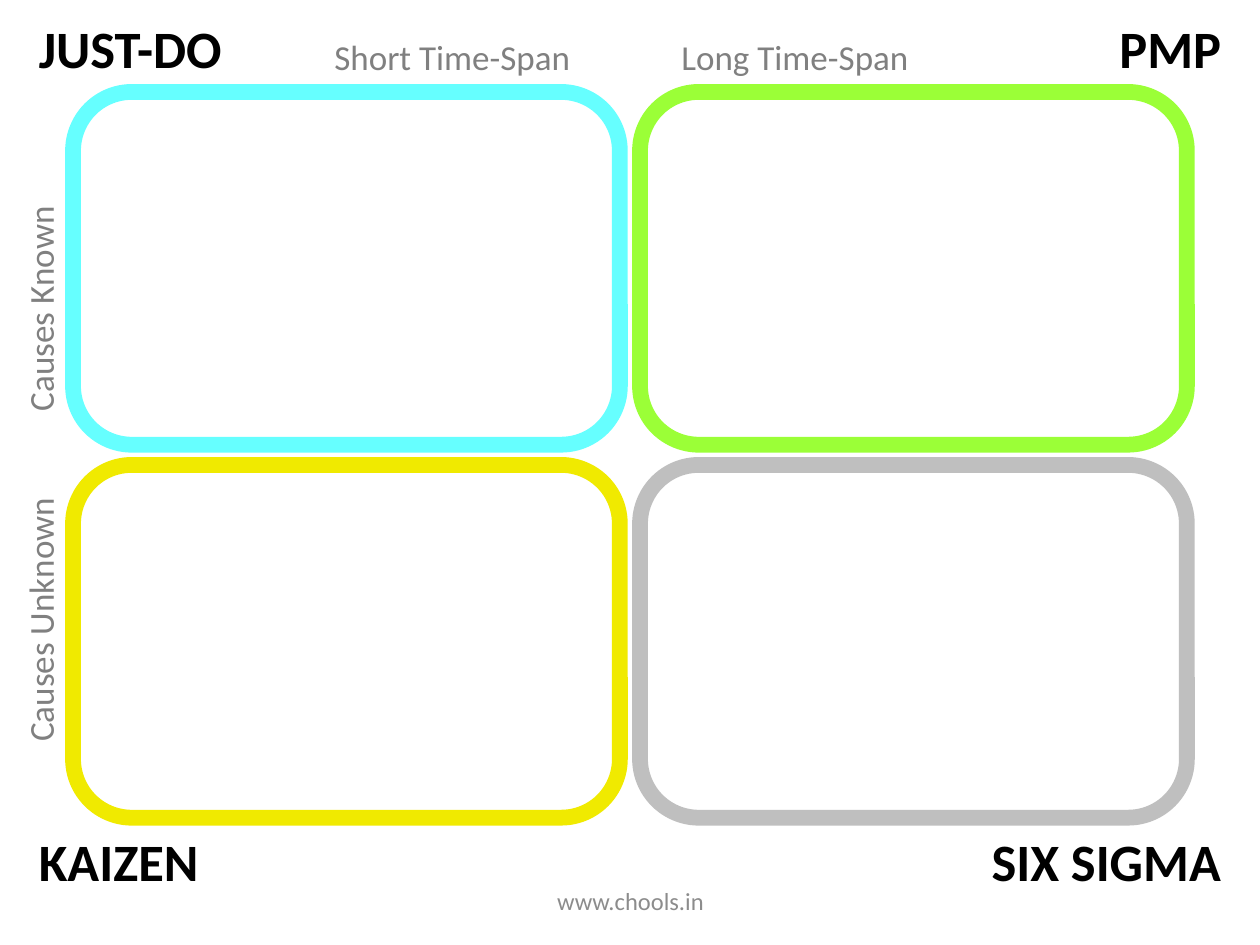
import pptx
import pptx.util
from pptx.dml.color import RGBColor
from pptx.enum.shapes import MSO_SHAPE
from pptx.enum.text import MSO_ANCHOR, PP_ALIGN
from pptx.util import Inches, Pt

FONT = "Calibri"
WHITE = RGBColor(0xFF, 0xFF, 0xFF)
BLACK = RGBColor(0x00, 0x00, 0x00)
AXIS_GRAY = RGBColor(0x80, 0x80, 0x80)
FOOTER_GRAY = RGBColor(0x8C, 0x8C, 0x8C)
CYAN = RGBColor(0x66, 0xFF, 0xFF)
GREEN = RGBColor(0x9B, 0xFF, 0x37)
YELLOW = RGBColor(0xF0, 0xEA, 0x00)
SILVER = RGBColor(0xBF, 0xBF, 0xBF)

SLIDE_W, SLIDE_H = 10, 7.5

# Method, column, row, outline colour, label width
QUADRANTS = [
    ("JUST-DO", 0, 0, CYAN, 1.69),
    ("PMP", 1, 0, GREEN, 1.02),
    ("KAIZEN", 0, 1, YELLOW, 1.48),
    ("SIX SIGMA", 1, 1, SILVER, 2.04),
]
# Label, centre x, centre y, rotation
AXIS_LABELS = [
    ("Short Time-Span", 3.59, 0.45, 0),
    ("Long Time-Span", 6.31, 0.45, 0),
    ("Causes Known", 0.32, 2.45, 270),
    ("Causes Unknown", 0.32, 4.92, 270),
]
FOOTER = "www.chools.in"

BOX_W, BOX_H, GAP = 4.34, 2.8, 0.16
GRID_LEFT, GRID_TOP = 0.58, 0.73
LABEL_MARGIN, LABEL_H, LABEL_TOPS = 0.21, 0.61, (0.08, 6.53)
AXIS_W, AXIS_H = 2.3, 0.44


def add_text(s, text, left, top, width, height, size=20, color=BLACK, bold=False,
             align=PP_ALIGN.LEFT, anchor=MSO_ANCHOR.TOP, rotation=0):
    sp = s.shapes.add_textbox(Inches(left), Inches(top), Inches(width), Inches(height))
    sp.rotation = rotation
    tf = sp.text_frame
    tf.word_wrap = False
    tf.vertical_anchor = anchor
    p = tf.paragraphs[0]
    p.alignment = align
    r = p.add_run()
    r.text = text
    r.font.name = FONT
    r.font.size = Pt(size)
    r.font.bold = bold
    r.font.color.rgb = color


def add_quadrant(s, col, row, color):
    sp = s.shapes.add_shape(
        MSO_SHAPE.ROUNDED_RECTANGLE,
        Inches(GRID_LEFT + col * (BOX_W + GAP)), Inches(GRID_TOP + row * (BOX_H + GAP)),
        Inches(BOX_W), Inches(BOX_H))
    sp.shadow.inherit = False
    sp.fill.solid()
    sp.fill.fore_color.rgb = WHITE
    sp.line.color.rgb = color
    sp.line.width = Pt(9)


def main():
    prs = pptx.Presentation()
    prs.slide_width, prs.slide_height = Inches(SLIDE_W), Inches(SLIDE_H)
    s = prs.slides.add_slide(prs.slide_layouts[6])

    for _, col, row, color, _ in QUADRANTS:
        add_quadrant(s, col, row, color)

    for text, col, row, _, width in QUADRANTS:
        left = SLIDE_W - LABEL_MARGIN - width if col else LABEL_MARGIN
        add_text(s, text, left, LABEL_TOPS[row], width, LABEL_H, size=30, bold=True,
                 align=PP_ALIGN.RIGHT if col else PP_ALIGN.LEFT)

    for text, x, y, rotation in AXIS_LABELS:
        add_text(s, text, x - AXIS_W / 2, y - AXIS_H / 2, AXIS_W, AXIS_H,
                 color=AXIS_GRAY, align=PP_ALIGN.CENTER, rotation=rotation)

    add_text(s, FOOTER, 3.42, 6.95, 3.17, 0.4, size=14, color=FOOTER_GRAY,
             align=PP_ALIGN.CENTER, anchor=MSO_ANCHOR.MIDDLE)
    prs.save("out.pptx")


if __name__ == "__main__":
    main()
